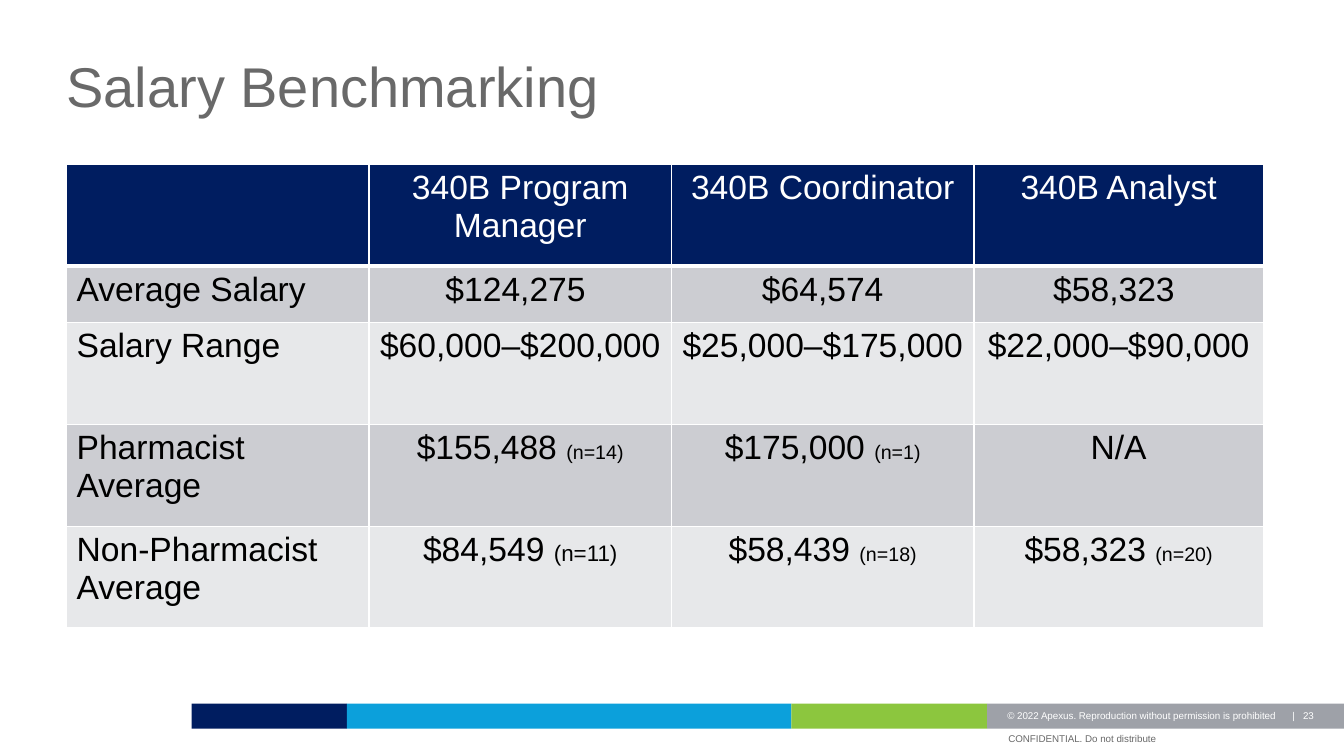
from pptx import Presentation
from pptx.dml.color import RGBColor
from pptx.enum import shapes, text
from pptx.oxml import parse_xml
from pptx.oxml.ns import nsdecls
from pptx.util import Inches, Pt

FONT = "Arial"
COLORS = {
    "navy": "001D60", "blue": "0CA0DB", "green": "8CC63E", "gray": "9EA1A8",
    "dark_band": "CCCDD2", "light_band": "E7E8EA",
    "title": "696969", "black": "000000", "white": "FFFFFF",
}
TITLE = "Salary Benchmarking"
# A cell is its text, or (text, sample size, point size of the sample size)
ROWS = [
    ["", "340B Program Manager", "340B Coordinator", "340B Analyst"],
    ["Average Salary", "$124,275 ", "$64,574", "$58,323 "],
    ["Salary Range", "$60,000–$200,000", "$25,000–$175,000", "$22,000–$90,000"],
    ["Pharmacist Average", ("$155,488 ", "(n=14)", 14), ("$175,000 ", "(n=1)", 14), "N/A"],
    ["Non-Pharmacist Average", ("$84,549 ", "(n=11)", 16), ("$58,439 ", "(n=18)", 14),
     ("$58,323 ", "(n=20)", 14)],
]
COLUMN_WIDTHS = [3, 3, 3, 2.87]
ROW_HEIGHTS = [1.01, 0.56, 1.01, 1.01, 1.01]

WIDTH, HEIGHT = 13.33, 7.5
MARGIN = 0.66
TABLE_TOP = 1.63
BAR_TOP, BAR_HEIGHT = 6.98, 0.25
BAR_STARTS = [("navy", 1.9), ("blue", 3.44), ("green", 7.85), ("gray", 9.79)]
FOOTER_LINES = [
    ("© 2022 Apexus. Reproduction without permission is prohibited", 9.99, 7, "white"),
    ("CONFIDENTIAL. Do not distribute", 10, 7.23, "title"),
]


def rgb(name):
    return RGBColor.from_string(COLORS[name])


def style(font, size, color):
    font.name, font.size, font.color.rgb = FONT, Pt(size), rgb(color)


def clear_insets(frame):
    frame.margin_left = frame.margin_right = frame.margin_top = frame.margin_bottom = 0


def add_small_text(page, words, box_place, color):
    box = page.shapes.add_textbox(*map(Inches, box_place))
    frame = box.text_frame
    frame.word_wrap = True
    para = frame.paragraphs[0]
    para.text = words
    style(para.font, 7, color)
    return frame


def add_bars(page):
    ends = [start for _, start in BAR_STARTS[1:]] + [WIDTH]
    for (color, start), end in zip(BAR_STARTS, ends):
        bar = page.shapes.add_shape(
            shapes.MSO_SHAPE.RECTANGLE,
            *map(Inches, (start, BAR_TOP, end - start, BAR_HEIGHT)))
        bar.shadow.inherit = False
        bar.fill.solid()
        bar.fill.fore_color.rgb = rgb(color)
        bar.line.fill.background()


def add_footer(page):
    for words, left, top, color in FOOTER_LINES:
        frame = add_small_text(page, words, (left, top, 3.35, 0.16), color)
        clear_insets(frame)
        frame.vertical_anchor = text.MSO_ANCHOR.BOTTOM
    number = add_small_text(page, "|   23", (10.82, 6.99, 2.31, 0.22), "white")
    number.auto_size = text.MSO_AUTO_SIZE.SHAPE_TO_FIT_TEXT
    number.paragraphs[0].alignment = text.PP_ALIGN.RIGHT


def set_borders(cell, bottom):
    properties = cell._tc.get_or_add_tcPr()
    for place, (side, width) in enumerate([("L", 1), ("R", 1), ("T", 1), ("B", bottom)]):
        properties.insert(place, parse_xml(
            f'<a:ln{side} {nsdecls("a")} w="{Pt(width)}"><a:solidFill>'
            f'<a:srgbClr val="{COLORS["white"]}"/></a:solidFill></a:ln{side}>'))


def fill_cell(cell, content, row, column):
    header = row == 0
    band = "navy" if header else "dark_band" if row % 2 else "light_band"
    cell.fill.solid()
    cell.fill.fore_color.rgb = rgb(band)
    set_borders(cell, bottom=3 if header else 1)
    para = cell.text_frame.paragraphs[0]
    if column:
        para.alignment = text.PP_ALIGN.CENTER
    words, *sample = [content] if isinstance(content, str) else content
    spans = [(words, 24)] + ([tuple(sample)] if sample else [])
    for words, size in spans:
        if words:
            span = para.add_run()
            span.text = words
            style(span.font, size, "white" if header else "black")
            span.font.bold = False


def add_salary_table(page):
    table = page.shapes.add_table(
        len(ROWS), len(COLUMN_WIDTHS),
        *map(Inches, (MARGIN, TABLE_TOP, sum(COLUMN_WIDTHS), sum(ROW_HEIGHTS)))).table
    for column, width in zip(table.columns, COLUMN_WIDTHS):
        column.width = Inches(width)
    for line, height in zip(table.rows, ROW_HEIGHTS):
        line.height = Inches(height)
    for row, contents in enumerate(ROWS):
        for column, content in enumerate(contents):
            fill_cell(table.cell(row, column), content, row, column)


def set_title(page):
    title = page.shapes.title
    title.left, title.top, title.width, title.height = map(Inches, (MARGIN, 0.45, 10.26, 0.88))
    frame = title.text_frame
    frame.word_wrap = True
    frame.vertical_anchor = text.MSO_ANCHOR.MIDDLE
    frame.auto_size = text.MSO_AUTO_SIZE.NONE
    clear_insets(frame)
    para = frame.paragraphs[0]
    para.text = TITLE
    para.alignment = text.PP_ALIGN.LEFT
    para.line_spacing = 0.9
    style(para.font, 40, "title")


def main():
    deck = Presentation()
    deck.slide_width, deck.slide_height = Inches(WIDTH), Inches(HEIGHT)
    page = deck.slides.add_slide(deck.slide_layouts.get_by_name("Title Only"))
    set_title(page)
    add_bars(page)
    add_footer(page)
    add_salary_table(page)
    deck.save("out.pptx")


if __name__ == "__main__":
    main()
